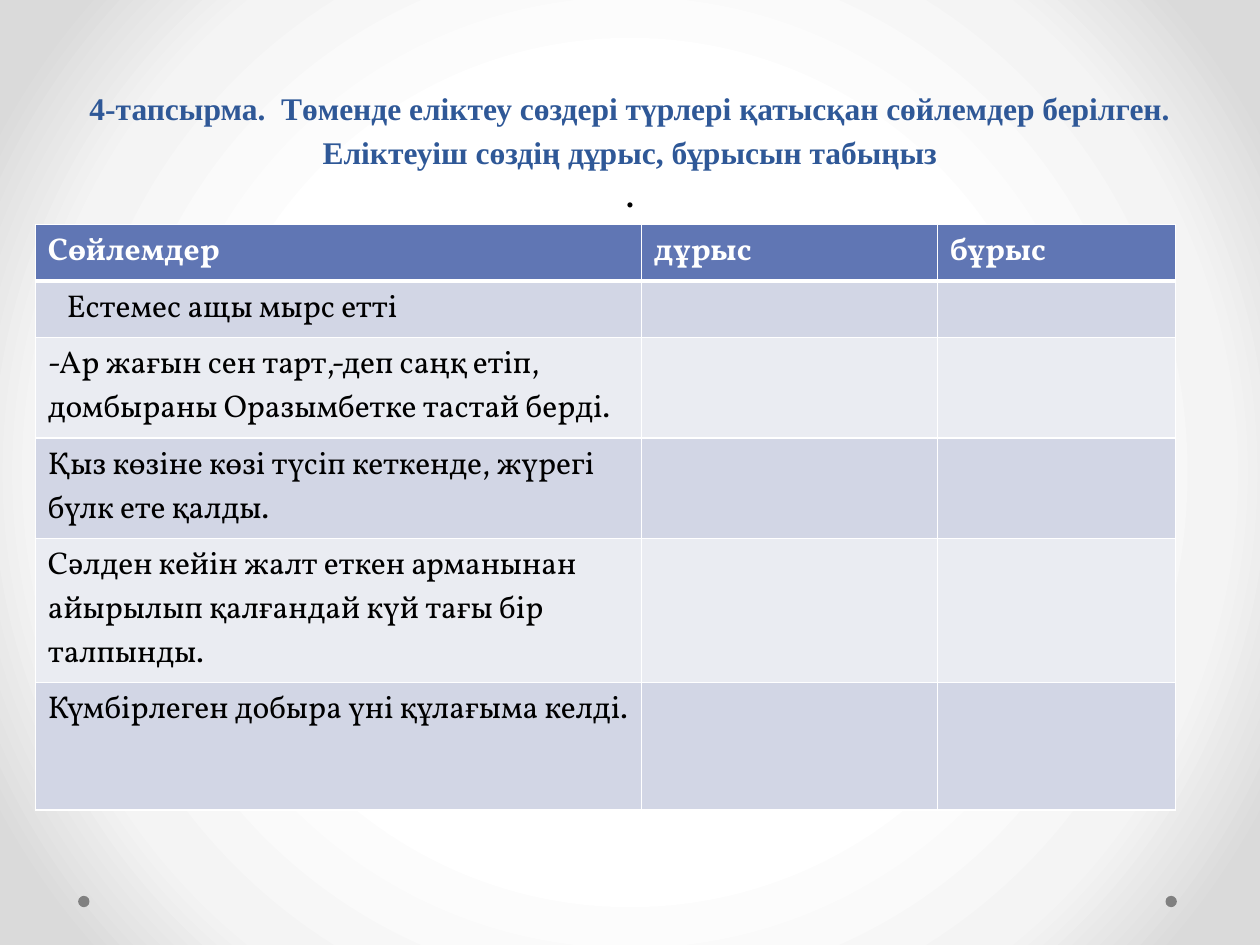
from dataclasses import dataclass

from lxml import etree
from pptx import Presentation
from pptx.dml.color import RGBColor
from pptx.enum.shapes import MSO_SHAPE
from pptx.enum.text import MSO_ANCHOR, MSO_AUTO_SIZE, PP_ALIGN
from pptx.oxml import parse_xml
from pptx.oxml.ns import nsdecls, qn
from pptx.slide import Slide
from pptx.util import Inches, Pt

WHITE = RGBColor(0xFF, 0xFF, 0xFF)
BLACK = RGBColor(0, 0, 0)
GRAY = RGBColor(0x80, 0x80, 0x80)
TITLE_BLUE = RGBColor(0x2F, 0x58, 0x97)
HEADER_BLUE = RGBColor(0x60, 0x76, 0xB4)
BAND_DARK = RGBColor(0xD2, 0xD6, 0xE5)
BAND_LIGHT = RGBColor(0xEA, 0xEC, 0xF2)
BACKGROUND_STOPS = [(50, WHITE), (76, RGBColor(0xF4, 0xF4, 0xF4)),
                    (92, RGBColor(0xDA, 0xDA, 0xDA))]

TITLE_LINES = [
    "4-тапсырма.  Төменде еліктеу сөздері түрлері қатысқан сөйлемдер берілген.",
    "Еліктеуіш сөздің дұрыс, бұрысын табыңыз",
]
HEADINGS = ["Сөйлемдер", "дұрыс", "бұрыс"]
COLUMN_WIDTHS = [4.81, 2.35, 1.89]
HEADER_HEIGHT = 0.41


@dataclass
class Sentence:
    text: str
    height: float
    indent: float = 0


SENTENCES = [
    Sentence("Естемес ащы мырс етті", 0.41, indent=0.15),
    Sentence("-Ар жағын сен тарт,-деп саңқ етіп, домбыраны Оразымбетке тастай берді.", 0.7),
    Sentence("Қыз көзіне көзі түсіп кеткенде, жүрегі бүлк ете қалды.", 0.7),
    Sentence("Сәлден кейін жалт еткен арманынан айырылып қалғандай күй тағы бір талпынды.", 1.01),
    Sentence("Күмбірлеген добыра үні құлағыма келді.", 1.01),
]


def paint_background(page: Slide) -> None:
    """Fill the page with a gradient that spreads in circles from its centre."""
    page.background.fill.gradient()
    gradient = page.background._cSld.find(".//" + qn("a:gradFill"))
    stops = "".join(
        f'<a:gs pos="{position * 1000}"><a:srgbClr val="{color}"/></a:gs>'
        for position, color in BACKGROUND_STOPS)
    gradient.getparent().replace(gradient, parse_xml(
        f'<a:gradFill {nsdecls("a")} rotWithShape="1"><a:gsLst>{stops}</a:gsLst>'
        '<a:path path="circle"><a:fillToRect l="50000" t="50000" r="50000" b="50000"/>'
        '</a:path></a:gradFill>'))


def add_dot(page: Slide, left: float) -> None:
    dot = page.shapes.add_shape(
        MSO_SHAPE.OVAL, Inches(left), Inches(7.11), Inches(0.09), Inches(0.09))
    dot.shadow.inherit = False
    dot.fill.solid()
    dot.fill.fore_color.rgb = GRAY
    dot.line.fill.background()


def fill_title(page: Slide) -> None:
    title = page.shapes.title
    title.left, title.top = Inches(0.5), Inches(0)
    title.width, title.height = Inches(9), Inches(1.75)
    frame = title.text_frame
    frame.word_wrap = True
    frame.auto_size = MSO_AUTO_SIZE.NONE
    frame.vertical_anchor = MSO_ANCHOR.BOTTOM
    para = frame.paragraphs[0]
    para.alignment = PP_ALIGN.CENTER
    para.line_spacing = 1.15
    para.space_after = Pt(6)
    para.font.name = "Times New Roman"
    para.font.size = Pt(18)
    para.font.bold = True
    for line in TITLE_LINES:
        span = para.add_run()
        span.text = line
        span.font.color.rgb = TITLE_BLUE
        para.add_line_break()
    period = para.add_run()
    period.text = "."
    period.font.color.rgb = BLACK


def add_border(cell, side: str, points: float) -> None:
    line = etree.SubElement(cell._tc.get_or_add_tcPr(), qn(f"a:ln{side}"), w=str(Pt(points)))
    fill = etree.SubElement(line, qn("a:solidFill"))
    etree.SubElement(fill, qn("a:srgbClr"), val=str(WHITE))


def format_cell(cell, text: str, fill: RGBColor, is_header: bool = False,
                top: float = 1) -> None:
    for side, points in (("L", 1), ("R", 1), ("T", top), ("B", 3 if is_header else 1)):
        add_border(cell, side, points)
    cell.fill.solid()
    cell.fill.fore_color.rgb = fill
    para = cell.text_frame.paragraphs[0]
    para.text = text
    para.font.name = "Vollkorn"
    para.font.size = Pt(18)
    para.font.bold = is_header
    para.font.color.rgb = WHITE if is_header else BLACK


def add_sentence_table(page: Slide) -> None:
    heights = [HEADER_HEIGHT] + [sentence.height for sentence in SENTENCES]
    table = page.shapes.add_table(
        len(heights), len(HEADINGS), Inches(0.28), Inches(1.78),
        Inches(sum(COLUMN_WIDTHS)), Inches(sum(heights))).table
    for column, width in zip(table.columns, COLUMN_WIDTHS):
        column.width = Inches(width)
    for row, height in zip(table.rows, heights):
        row.height = Inches(height)
    for column, heading in enumerate(HEADINGS):
        format_cell(table.cell(0, column), heading, HEADER_BLUE, is_header=True)
    for row, sentence in enumerate(SENTENCES, start=1):
        band = BAND_DARK if row % 2 else BAND_LIGHT
        for column in range(len(HEADINGS)):
            format_cell(table.cell(row, column), "" if column else sentence.text,
                        band, top=3 if row == 1 else 1)
        table.cell(row, 0).margin_left = Inches(0.1 + sentence.indent)


def main() -> None:
    deck = Presentation()
    deck.slide_width, deck.slide_height = Inches(10), Inches(7.5)
    page = deck.slides.add_slide(deck.slide_layouts[5])
    paint_background(page)
    for left in (9.25, 0.62):
        add_dot(page, left)
    fill_title(page)
    add_sentence_table(page)
    deck.save("out.pptx")


if __name__ == "__main__":
    main()
